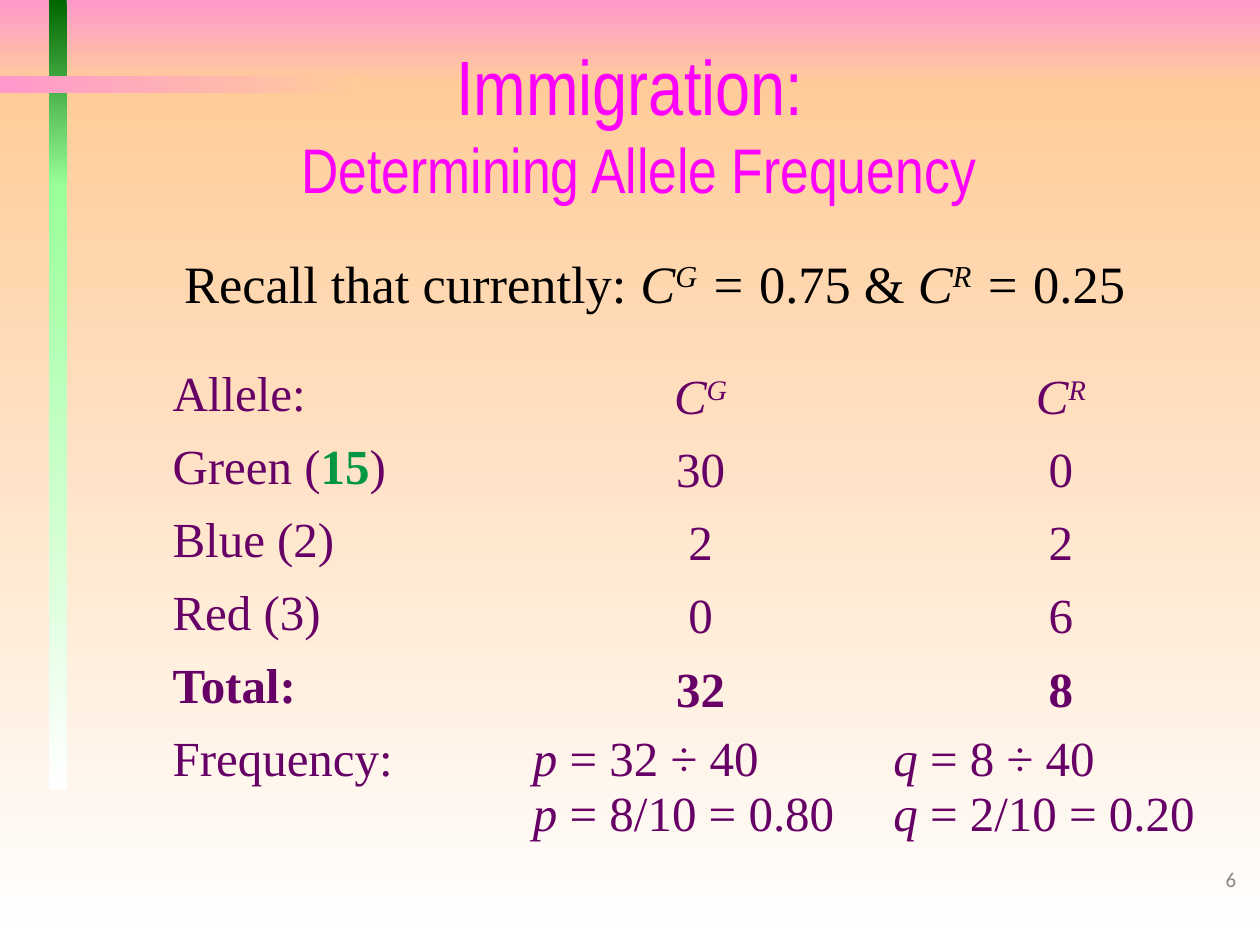
from pptx import Presentation
from pptx.dml.color import RGBColor
from pptx.enum.shapes import MSO_SHAPE
from pptx.enum.text import MSO_ANCHOR, PP_ALIGN
from pptx.oxml.ns import qn
from pptx.util import Inches, Pt

RECTANGLE = MSO_SHAPE.RECTANGLE
TOP, MIDDLE = MSO_ANCHOR.TOP, MSO_ANCHOR.MIDDLE
LEFT, CENTER, RIGHT = PP_ALIGN.LEFT, PP_ALIGN.CENTER, PP_ALIGN.RIGHT

COLORS = {
    "pink": "FF99CC",
    "peach": "FFCC99",
    "white": "FFFFFF",
    "dark green": "006600",
    "light green": "99FF99",
    "magenta": "FF00FF",
    "black": "000000",
    "purple": "660066",
    "green": "009644",
    "gray": "898989",
}
TITLE_FONT, BODY_FONT, NUMBER_FONT = "Arial Narrow", "Times New Roman", "Calibri"
NO_GRID_STYLE = "{2D5ABB26-0587-4C30-8999-92F81FD0307C}"
DOWN, ACROSS = 270, 0

# Run styles
PLAIN = {}
ITALIC = {"italic": True}
BOLD = {"bold": True}
SUPERSCRIPT = {"italic": True, "superscript": True}
GREEN_BOLD = {"bold": True, "color": "green"}

GREEN_ALLELE = [("C", ITALIC), ("G", SUPERSCRIPT)]
RED_ALLELE = [("C", ITALIC), ("R", SUPERSCRIPT)]

# left, top, width, height, start color, end color, direction
BANDS = [
    (0, 0, 10, 0.67, "pink", "peach", DOWN),
    (0, 0.67, 10, 6.83, "peach", "white", DOWN),
    (0.39, 0, 0.14, 1.48, "dark green", "light green", DOWN),
    (0.39, 1.46, 0.14, 4.81, "light green", "white", DOWN),
    (0, 0.6, 2.89, 0.14, "pink", "peach", ACROSS),
]

RECALL = [
    ("Recall that currently: ", PLAIN), *GREEN_ALLELE, (" = ", ITALIC),
    ("0.75 &", PLAIN), (" ", ITALIC), *RED_ALLELE, (" = ", ITALIC), ("0.25", PLAIN),
]


def plain(text):
    return [[(text, PLAIN)]]


def bold(text):
    return [[(text, BOLD)]]


def frequency(letter, *results):
    return [[(f"{letter} ", ITALIC), (f"= {result}", PLAIN)] for result in results]


# Each cell is a list of paragraphs, each paragraph a list of (text, style) runs
ALLELE_ROWS = [
    [plain("Allele:"), [GREEN_ALLELE], [RED_ALLELE]],
    [[[("Green (", PLAIN), ("15", GREEN_BOLD), (")", PLAIN)]], plain("30"), plain("0")],
    [plain("Blue (2)"), plain("2"), plain("2")],
    [plain("Red (3)"), plain("0"), plain("6")],
    [bold("Total:"), bold("32"), bold("8")],
    [plain("Frequency:"), frequency("p", "32 ÷ 40", "8/10 = 0.80"),
     frequency("q", "8 ÷ 40", "2/10 = 0.20")],
]


class SlideBuilder:
    def __init__(self, slide):
        self.slide = slide

    def gradient_band(self, left, top, width, height, start, end, direction):
        band = self.slide.shapes.add_shape(
            RECTANGLE, Inches(left), Inches(top), Inches(width), Inches(height))
        band.shadow.inherit = False
        band.line.fill.background()
        band.fill.gradient()
        band.fill.gradient_angle = direction
        for stop, position, color in zip(band.fill.gradient_stops, (0, 1), (start, end)):
            stop.position = position
            stop.color.rgb = RGBColor.from_string(COLORS[color])

    def style_run(self, run, font, size, color, bold=False, italic=False, superscript=False):
        run.font.name = font
        run.font.size = Pt(size)
        run.font.color.rgb = RGBColor.from_string(COLORS[color])
        run.font.bold = bold
        run.font.italic = italic
        if superscript:
            run._r.get_or_add_rPr().set("baseline", "30000")

    def write_runs(self, paragraph, runs, alignment, base):
        """Add (text, style) runs, each style overriding the base style."""
        paragraph.alignment = alignment
        for text, style in runs:
            run = paragraph.add_run()
            run.text = text
            self.style_run(run, **{**base, **style})

    def text_box(self, left, top, width, height, anchor=TOP):
        box = self.slide.shapes.add_textbox(
            Inches(left), Inches(top), Inches(width), Inches(height))
        box.text_frame.word_wrap = True
        box.text_frame.vertical_anchor = anchor
        return box.text_frame.paragraphs[0]

    def title(self, heading, subheading):
        paragraph = self.text_box(0.57, 0.49, 9, 0.96, MIDDLE)
        paragraph.text = f"{heading}\v{subheading}"
        paragraph.alignment = CENTER
        for run, size in zip(paragraph.runs, (44, 36)):
            self.style_run(run, TITLE_FONT, size, "magenta")

    def line(self, left, top, width, height, runs, alignment, base):
        paragraph = self.text_box(left, top, width, height)
        self.write_runs(paragraph, runs, alignment, base)

    def table(self, left, top, column_width, row_heights, rows, base):
        column_count = len(rows[0])
        table = self.slide.shapes.add_table(
            len(rows), column_count, Inches(left), Inches(top),
            Inches(column_width * column_count), Inches(sum(row_heights))).table
        table.first_row = table.horz_banding = False
        table._tbl.tblPr.find(qn("a:tableStyleId")).text = NO_GRID_STYLE
        for column in table.columns:
            column.width = Inches(column_width)
        for row_index, (height, row) in enumerate(zip(row_heights, rows)):
            table.rows[row_index].height = Inches(height)
            for column_index, paragraphs in enumerate(row):
                cell = table.cell(row_index, column_index)
                cell.fill.background()
                centered = column_index > 0 and row_index < len(rows) - 1
                cell.vertical_anchor = MIDDLE if centered else TOP
                for index, runs in enumerate(paragraphs):
                    frame = cell.text_frame
                    paragraph = frame.add_paragraph() if index else frame.paragraphs[0]
                    self.write_runs(paragraph, runs, CENTER if centered else LEFT, base)


def main():
    presentation = Presentation()
    presentation.slide_width = Inches(10)
    presentation.slide_height = Inches(7.5)
    builder = SlideBuilder(presentation.slides.add_slide(presentation.slide_layouts[6]))

    for band in BANDS:
        builder.gradient_band(*band)
    builder.title("Immigration: ", "Determining Allele Frequency")
    builder.line(7.83, 6.83, 2.08, 0.5, [("6", PLAIN)], RIGHT,
                 {"font": NUMBER_FONT, "size": 12, "color": "gray"})
    builder.line(0.57, 1.94, 9.25, 0.61, RECALL, CENTER,
                 {"font": BODY_FONT, "size": 30, "color": "black"})
    builder.table(1.27, 2.87, 2.86, [0.58] * 5 + [1.03], ALLELE_ROWS,
                  {"font": BODY_FONT, "size": 28, "color": "purple"})

    presentation.save("out.pptx")


if __name__ == "__main__":
    main()
